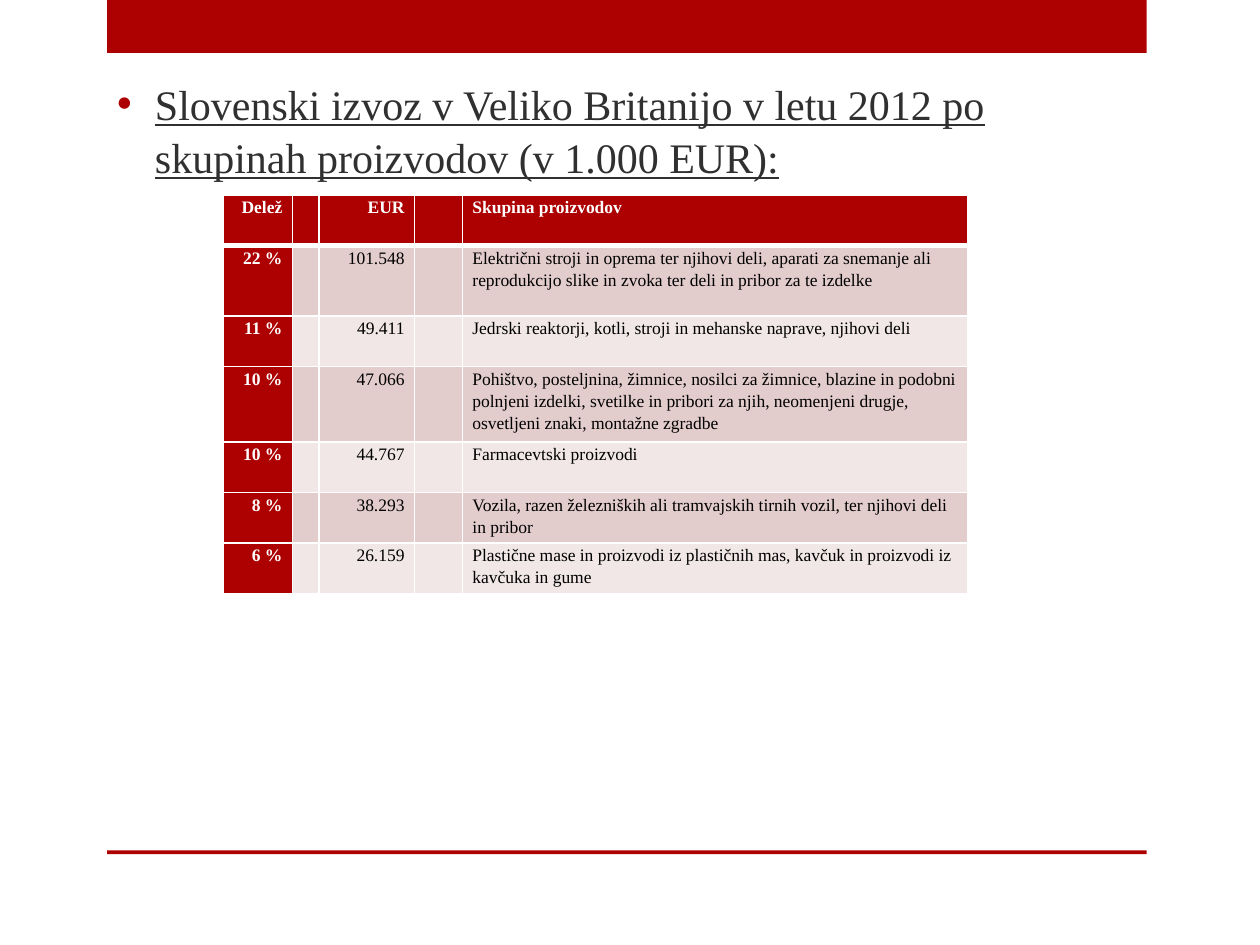
from dataclasses import dataclass

from lxml.etree import SubElement
from pptx import Presentation
from pptx.dml.color import RGBColor
from pptx.enum.shapes import MSO_SHAPE as Preset
from pptx.enum.text import MSO_ANCHOR as Anchor, PP_ALIGN as Align
from pptx.oxml.ns import qn
from pptx.slide import Slide
from pptx.table import _Cell as Cell
from pptx.util import Inches, Pt

WIDTH, HEIGHT = 10, 7.5
RED, WHITE, BLACK, GREY = "AD0101", "FFFFFF", "000000", "303030"
BANDS = ("E3CCCC", "F1E7E7")
FONT = "Times New Roman"
HEADING = "Slovenski izvoz v Veliko Britanijo v letu 2012 po skupinah proizvodov (v 1.000 EUR):"
COLUMNS = (0.55, 0.21, 0.76, 0.38, 4.01)


@dataclass(frozen=True)
class Bar:
    top: float
    height: float


@dataclass(frozen=True)
class ExportRow:
    share: str
    value: str
    group: str
    height: float = 0.4

    def texts(self) -> tuple[str, ...]:
        return self.share, "", self.value, "", self.group


BARS = (Bar(0, 0.056), Bar(0.9, 0.004))
EXPORTS = (
    ExportRow("Delež", "EUR", "Skupina proizvodov"),
    ExportRow("22 %", "101.548", "Električni stroji in oprema ter njihovi deli, aparati za snemanje ali "
              "reprodukcijo slike in zvoka ter deli in pribor za te izdelke", 0.56),
    ExportRow("11 %", "49.411", "Jedrski reaktorji, kotli, stroji in mehanske naprave, njihovi deli"),
    ExportRow("10 %", "47.066", "Pohištvo, posteljnina, žimnice, nosilci za žimnice, blazine in podobni "
              "polnjeni izdelki, svetilke in pribori za njih, neomenjeni drugje, osvetljeni znaki, "
              "montažne zgradbe", 0.6),
    ExportRow("10 %", "44.767", "Farmacevtski proizvodi"),
    ExportRow("8 %", "38.293", "Vozila, razen železniških ali tramvajskih tirnih vozil, ter njihovi deli in pribor"),
    ExportRow("6 %", "26.159", "Plastične mase in proizvodi iz plastičnih mas, kavčuk in proizvodi iz kavčuka in gume"),
)


def color(value: str) -> RGBColor:
    return RGBColor.from_string(value)


def draw_bar(slide: Slide, bar: Bar) -> None:
    stripe = slide.shapes.add_shape(
        Preset.RECTANGLE, Inches(0.085 * WIDTH), Inches(bar.top * HEIGHT),
        Inches(0.825 * WIDTH), Inches(bar.height * HEIGHT))
    stripe.shadow.inherit = False
    stripe.fill.solid()
    stripe.fill.fore_color.rgb = color(RED)
    stripe.line.fill.background()


def draw_heading(slide: Slide) -> None:
    heading = slide.shapes.title
    heading.left, heading.top = Inches(0.83), Inches(0.5)
    heading.width, heading.height = Inches(8.25), Inches(0.99)
    frame = heading.text_frame
    frame.text = HEADING
    frame.word_wrap = True
    frame.vertical_anchor = Anchor.BOTTOM
    line = frame.paragraphs[0]
    line.alignment = Align.LEFT
    line.line_spacing = 1.05
    props = line._p.get_or_add_pPr()
    props.set("marL", str(Inches(0.3)))
    props.set("indent", str(Inches(-0.3)))
    SubElement(SubElement(props, qn("a:buClr")), qn("a:srgbClr"), val=RED)
    SubElement(props, qn("a:buFont"), typeface="Arial")
    SubElement(props, qn("a:buChar"), char="•")
    line.font.name, line.font.size = FONT, Pt(24)
    line.font.underline = True
    line.font.color.rgb = color(GREY)


def set_borders(cell: Cell, top: int, bottom: int) -> None:
    props = cell._tc.get_or_add_tcPr()
    for side, width in (("L", 1), ("R", 1), ("T", top), ("B", bottom)):
        edge = SubElement(props, qn(f"a:ln{side}"), w=str(Pt(width)))
        SubElement(SubElement(edge, qn("a:solidFill")), qn("a:srgbClr"), val=WHITE)


def fill_cell(cell: Cell, text: str, row: int, column: int) -> None:
    strong = row == 0 or column == 0
    set_borders(cell, top=3 if row == 1 else 1, bottom=3 if row == 0 else 1)
    cell.fill.solid()
    cell.fill.fore_color.rgb = color(RED if strong else BANDS[(row - 1) % 2])
    cell.margin_left = cell.margin_right = Inches(0.08)
    cell.margin_top = cell.margin_bottom = 0
    cell.text = text
    line = cell.text_frame.paragraphs[0]
    line.alignment = Align.LEFT if column == len(COLUMNS) - 1 else Align.RIGHT
    line.line_spacing = 1.15
    line.space_after = Pt(3)
    line.font.name, line.font.size = FONT, Pt(10)
    line.font.bold = strong
    line.font.color.rgb = color(WHITE if strong else BLACK)


def draw_exports(slide: Slide) -> None:
    table = slide.shapes.add_table(
        len(EXPORTS), len(COLUMNS), Inches(1.77), Inches(1.55),
        Inches(sum(COLUMNS)), Inches(sum(export.height for export in EXPORTS))).table
    table.first_col = True
    for column, width in zip(table.columns, COLUMNS):
        column.width = Inches(width)
    for row, export in enumerate(EXPORTS):
        table.rows[row].height = Inches(export.height)
        for column, text in enumerate(export.texts()):
            fill_cell(table.cell(row, column), text, row, column)


def main() -> None:
    deck = Presentation()
    deck.slide_width, deck.slide_height = Inches(WIDTH), Inches(HEIGHT)
    slide = deck.slides.add_slide(deck.slide_layouts[5])
    for bar in BARS:
        draw_bar(slide, bar)
    draw_heading(slide)
    draw_exports(slide)
    deck.save("out.pptx")


if __name__ == "__main__":
    main()
